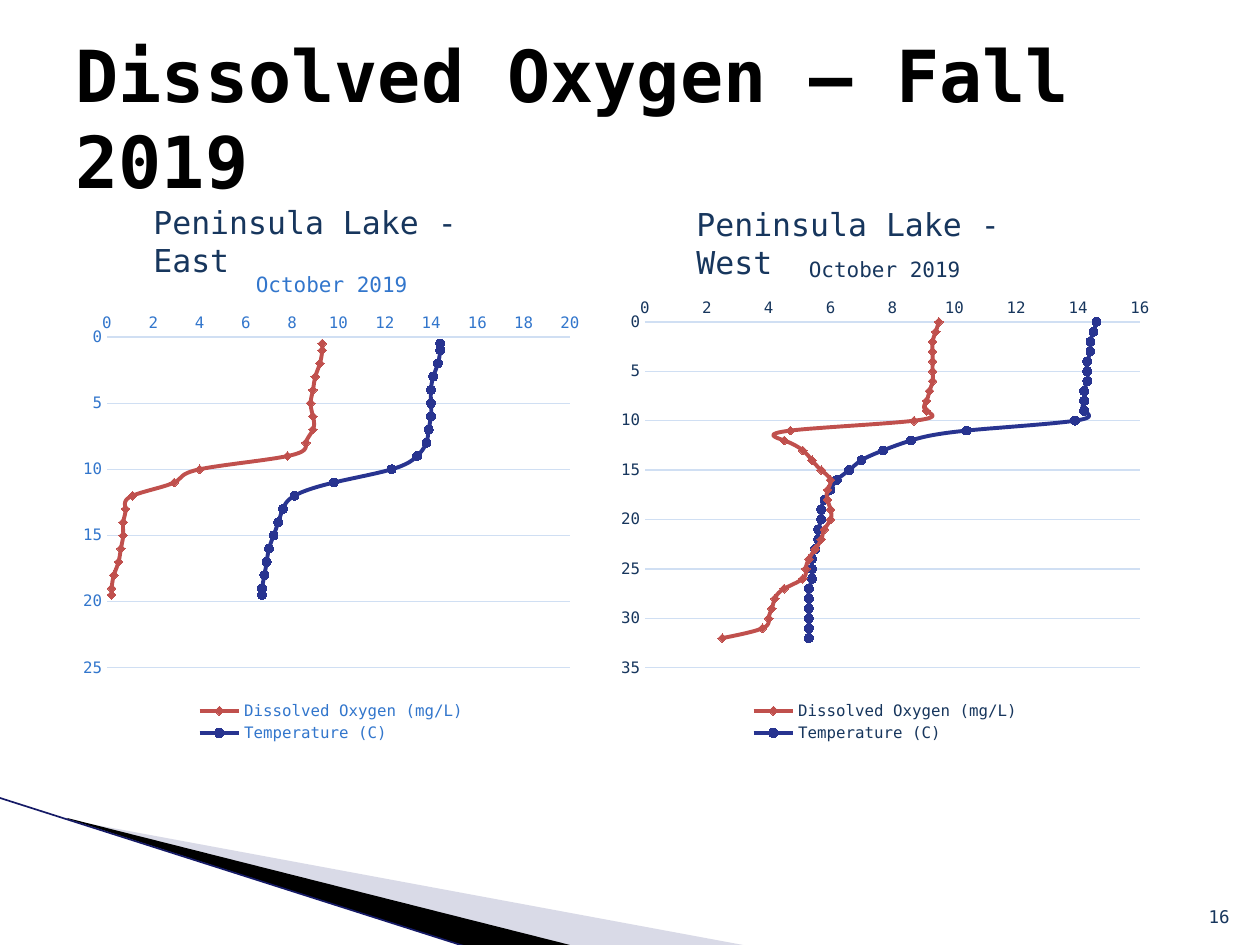
from dataclasses import dataclass

from lxml import etree
from pptx import Presentation
from pptx import util as u
from pptx.chart.data import XyChartData
from pptx.dml.color import RGBColor
from pptx.enum import chart as ce
from pptx.enum import shapes, text
from pptx.oxml import ns


@dataclass(frozen=True)
class Theme:
    face: str = "DejaVu Sans Mono"
    black: str = "000000"
    navy: str = "17365D"
    blue: str = "3276CC"
    grid: str = "D0DFF3"
    mist: str = "A1A3C3"
    edge: str = "151A66"
    red: str = "C0504D"
    deep: str = "283490"
    head: int = 41
    label: int = 18
    title: int = 12
    page: int = 10
    tick: int = 9


T = Theme()
SCALE = 914400 / 126

EAST = {
    "depth": [0.5, *range(1, 20), 19.5],
    "oxygen": [9.3, 9.3, 9.2, 9, 8.9, 8.8, 8.9, 8.9, 8.6, 7.8, 4, 2.9, 1.1,
               0.8, 0.7, 0.7, 0.6, 0.5, 0.3, 0.2, 0.2],
    "temp": [14.4, 14.4, 14.3, 14.1, 14, 14, 14, 13.9, 13.8, 13.4, 12.3, 9.8,
             8.1, 7.6, 7.4, 7.2, 7, 6.9, 6.8, 6.7, 6.7],
}
WEST = {
    "depth": [*range(33)],
    "oxygen": [9.5, 9.4, 9.3, 9.3, 9.3, 9.3, 9.3, 9.2, 9.1, 9.1, 8.7, 4.7,
               4.5, 5.1, 5.4, 5.7, 6, 5.9, 5.9, 6, 6, 5.8, 5.7, 5.5, 5.3, 5.2,
               5.1, 4.5, 4.2, 4.1, 4, 3.8, 2.5],
    "temp": [14.6, 14.5, 14.4, 14.4, 14.3, 14.3, 14.3, 14.2, 14.2, 14.2, 13.9,
             10.4, 8.6, 7.7, 7, 6.6, 6.2, 6, 5.8, 5.7, 5.7, 5.6, 5.6, 5.5, 5.4,
             5.4, 5.4, 5.3, 5.3, 5.3, 5.3, 5.3, 5.3],
}


def px(n):
    return u.Emu(round(n * SCALE))


def rgb(color):
    return RGBColor.from_string(color)


def style(font, size, color, bold=False):
    font.name, font.size, font.bold = T.face, u.Pt(size), bold
    font.color.rgb = rgb(color)


def write(frame, words, size=T.label, color=T.navy, bold=False,
          align=text.PP_ALIGN.LEFT, anchor=None):
    if anchor is not None:
        frame.vertical_anchor = anchor
    para = frame.paragraphs[0]
    para.alignment = align
    run = para.add_run()
    run.text = words
    style(run.font, size, color, bold)


def add_text(slide, box, words, **form):
    frame = slide.shapes.add_textbox(*map(px, box)).text_frame
    frame.word_wrap = True
    write(frame, words, **form)


def add_head(slide, box, words):
    head = slide.shapes.title
    head.left, head.top, head.width, head.height = map(px, box)
    head.text_frame.word_wrap = True
    head.text_frame.auto_size = text.MSO_AUTO_SIZE.NONE
    write(head.text_frame, words, size=T.head, color=T.black, bold=True,
          anchor=text.MSO_ANCHOR.MIDDLE)


def add_wedge(slide, box, points, color, alpha=None):
    left, top = box
    spots = [(left + x, top + y) for x, y in points]
    form = slide.shapes.build_freeform(*spots[0], scale=SCALE)
    form.add_line_segments(spots[1:], close=True)
    wedge = form.convert_to_shape()
    wedge.shadow.inherit = False
    wedge.fill.solid()
    wedge.fill.fore_color.rgb = rgb(color)
    wedge.line.fill.background()
    if alpha:
        tint = wedge.fill._xPr.find(".//" + ns.qn("a:srgbClr"))
        etree.SubElement(tint, ns.qn("a:alpha")).set("val", str(alpha * 1000))


def add_sweep(slide, box):
    left, top = box
    base = (left + 67, top + 20)
    add_wedge(slide, base, [(2, 2), (676, 127), (501, 127), (2, 1)], T.mist, 40)
    add_wedge(slide, base, [(0, 0), (503, 127), (394, 127), (1, 1)], T.black)
    line = slide.shapes.add_connector(
        shapes.MSO_CONNECTOR.STRAIGHT,
        *map(px, (left, top, left + 467, top + 149)))
    line.line.color.rgb = rgb(T.edge)
    line.line.width = u.Pt(0.95)
    etree.SubElement(line._element.spPr, ns.qn("a:effectLst"))


def place(part, index, box, size, inner=False):
    for old in part.findall(ns.qn("c:layout")):
        part.remove(old)
    layout = etree.Element(ns.qn("c:layout"))
    manual = etree.SubElement(layout, ns.qn("c:manualLayout"))
    rules = [("layoutTarget", "inner")] if inner else []
    rules += [("xMode", "edge"), ("yMode", "edge")]
    for key, length, whole in zip("xywh", box, size * 2):
        rules.append((key, f"{length / whole:.4f}"))
    for key, value in rules:
        etree.SubElement(manual, ns.qn("c:" + key)).set("val", value)
    part.insert(index, layout)


def format_axis(axis, color, top, step):
    axis.minimum_scale, axis.maximum_scale, axis.major_unit = 0, top, step
    axis.major_tick_mark = axis.minor_tick_mark = ce.XL_TICK_MARK.NONE
    axis.has_major_gridlines = False
    axis.tick_labels.number_format = "General"
    axis.tick_labels.number_format_is_linked = False
    style(axis.tick_labels.font, T.tick, color)


def draw_line(stroke, color, width):
    stroke.color.rgb = rgb(color)
    stroke.width = u.Pt(width)


def add_graph(slide, box, data, plot, key, title, color, wide, deep):
    table = XyChartData()
    for name, field in (("Dissolved Oxygen (mg/L)", "oxygen"),
                        ("Temperature (C)", "temp")):
        line = table.add_series(name)
        for x, y in zip(data[field], data["depth"]):
            line.add_data_point(x, y)
    chart = slide.shapes.add_chart(
        ce.XL_CHART_TYPE.XY_SCATTER_SMOOTH, *map(px, box), table).chart
    style(chart.font, T.page, T.navy)
    chart.plots[0].vary_by_categories = False

    marks = ((T.red, ce.XL_MARKER_STYLE.DIAMOND),
             (T.deep, ce.XL_MARKER_STYLE.CIRCLE))
    for line, (hue, mark) in zip(chart.plots[0].series, marks):
        line._element.get_or_add_smooth().val = True
        draw_line(line.format.line, hue, 2.25)
        line.marker.style, line.marker.size = mark, 5
        line.marker.format.fill.solid()
        line.marker.format.fill.fore_color.rgb = rgb(hue)
        draw_line(line.marker.format.line, hue, 0.75)

    across, down = chart.category_axis, chart.value_axis
    format_axis(across, color, wide, 2)
    format_axis(down, color, deep, 5)
    draw_line(across.format.line, T.grid, 0.75)
    down.format.line.fill.background()
    down.reverse_order = True
    down.has_major_gridlines = True
    draw_line(down.major_gridlines.format.line, T.grid, 0.75)

    chart.has_title = True
    write(chart.chart_title.text_frame, "October 2019", size=T.title,
          color=color, align=text.PP_ALIGN.CENTER)
    chart.has_legend = True
    chart.legend.position = ce.XL_LEGEND_POSITION.BOTTOM
    chart.legend.include_in_layout = False
    style(chart.legend.font, T.tick, color)

    size = box[2:]
    place(chart._chartSpace.chart.plotArea, 0, plot, size, inner=True)
    place(chart.chart_title._element, 1, title, size)
    place(chart.legend._element, 1, key, size)


def main():
    deck = Presentation()
    deck.slide_width, deck.slide_height = px(1260), px(945)
    slide = deck.slides.add_slide(deck.slide_layouts[5])
    add_sweep(slide, (0, 798))
    add_text(slide, (1192, 883, 50, 50), "16", size=T.page,
             align=text.PP_ALIGN.RIGHT, anchor=text.MSO_ANCHOR.BOTTOM)
    add_head(slide, (63, 38, 1134, 158), "Dissolved Oxygen – Fall 2019")
    add_text(slide, (141, 197, 355, 50), "Peninsula Lake - East")
    add_text(slide, (684, 199, 364, 50), "Peninsula Lake - West")
    add_graph(slide, (73, 249, 518, 499), EAST, plot=(34, 88, 463, 331),
              key=(123, 449, 270, 48), title=(179, 17), color=T.blue,
              wide=20, deep=25)
    add_graph(slide, (610, 234, 551, 513), WEST, plot=(35, 88, 495, 346),
              key=(140, 464, 270, 48), title=(195, 17), color=T.navy,
              wide=16, deep=35)
    deck.save("out.pptx")


if __name__ == "__main__":
    main()
